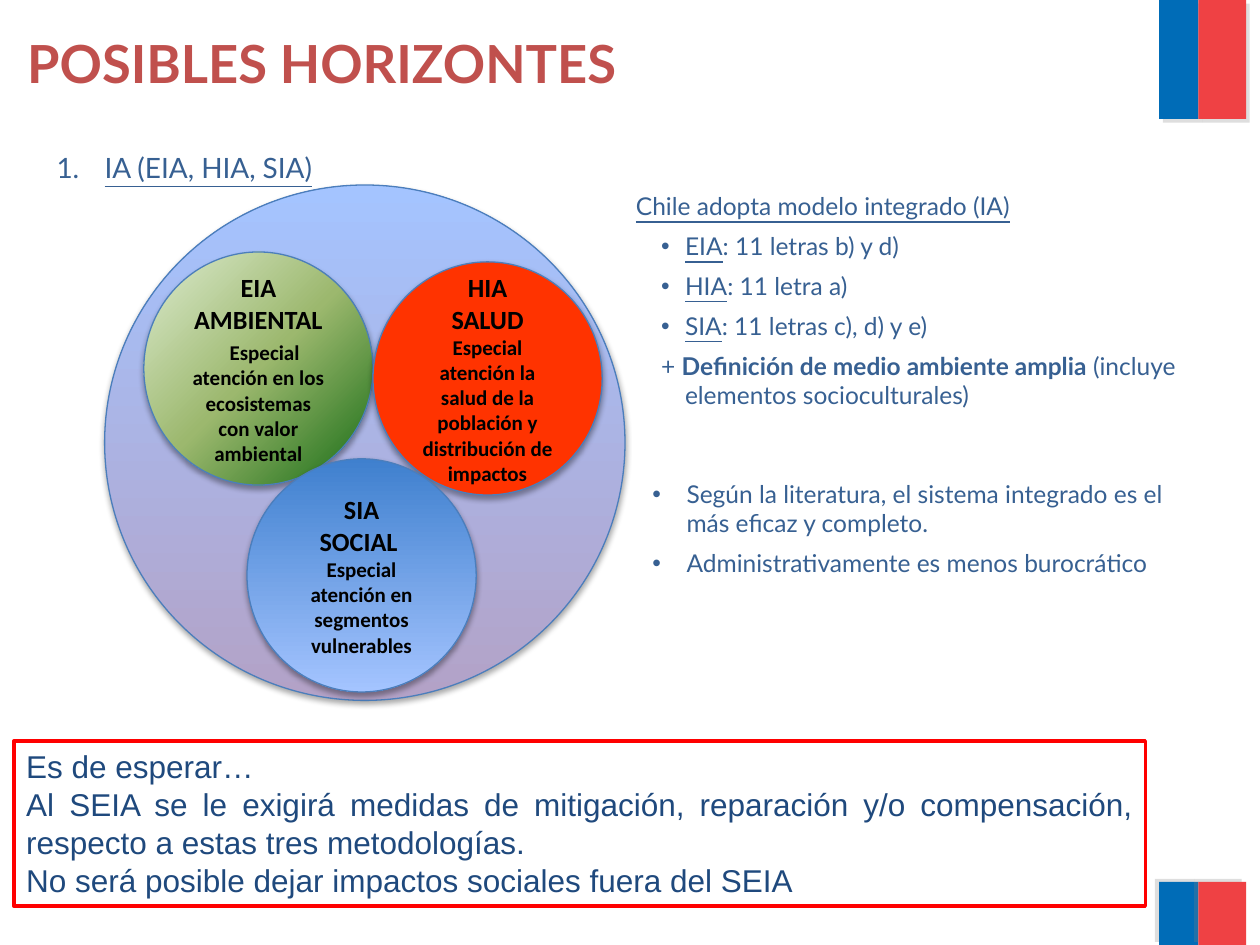
"""Build the slide on the integrated model of environmental, health and social assessment."""
import pptx
import pptx.dml.color
import pptx.enum.shapes
import pptx.enum.text
import pptx.oxml.ns
import pptx.util
from lxml import etree

Cm, Pt = pptx.util.Cm, pptx.util.Pt
RGB = pptx.dml.color.RGBColor
SHAPE = pptx.enum.shapes.MSO_SHAPE
ALIGN = pptx.enum.text.PP_ALIGN
ANCHOR = pptx.enum.text.MSO_ANCHOR
qn = pptx.oxml.ns.qn

FLAG_BLUE, FLAG_RED = RGB(0x00, 0x6C, 0xB7), RGB(0xEF, 0x41, 0x44)
TITLE, TEXT, NAVY = RGB(0xC0, 0x50, 0x4D), RGB(0x37, 0x60, 0x92), RGB(0x1F, 0x49, 0x7D)
BLACK, GREY, RED = RGB(0, 0, 0), RGB(0x80, 0x80, 0x80), RGB(0xFF, 0, 0)
OUTLINE, ORANGE = RGB(0x4B, 0x7E, 0xBC), RGB(0xFF, 0x33, 0x00)
LILAC, SKY, BLUE = RGB(0xB3, 0xA2, 0xC7), RGB(0xA4, 0xC4, 0xFF), RGB(0x3F, 0x80, 0xCE)
PALE, OLIVE, GREEN = RGB(0xDD, 0xEB, 0xCF), RGB(0x9C, 0xB8, 0x6E), RGB(0x15, 0x6B, 0x13)

FLAGS = [(0, 2.4, 45), (17.78, 1.27, 215)]
BANDS = [(23.37, 0.79, FLAG_BLUE), (24.16, 0.96, FLAG_RED)]
FLAG_SHADOW, CIRCLE_SHADOW = (GREY, 25, 0, 3), (BLACK, 35, 3.1, 1.8)

OUTER = (2.11, 3.73, 10.49, 10.39)
INNER_SIZE = (4.62, 4.7)
CIRCLES = [
    (2.9, 5.08, ([(0, PALE), (50, OLIVE), (100, GREEN)], 45), "EIA", "AMBIENTAL",
     "Especial atención en los ecosistemas con valor ambiental", {"first": 0.25, "before": 3}),
    (7.52, 5.28, ORANGE, "HIA", "SALUD",
     "Especial atención la salud de la población y distribución de impactos", {}),
    (4.98, 9.25, ([(0, BLUE), (100, SKY)], 90), "SIA", "SOCIAL ",
     "Especial atención en segmentos vulnerables", {}),
]

UNDER, BOLD = {"underline": True}, {"bold": True}
PLUS = {"left": 0.99, "first": -0.48, "before": 6}
LETTER = {**PLUS, "bullet": "•"}
POINT = {"left": 0.69, "first": -0.69, "before": 6, "bullet": "•"}
NUMBER = {"left": 0.97, "first": -0.97, "before": 6, "bullet": "1."}
LETTERS = [("EIA", ": 11 letras b) y d)"), ("HIA", ": 11 letra a)"), ("SIA", ": 11 letras c), d) y e)")]
BODY = {"name": "Lato", "size": Pt(14)}
TEXTS = [
    ((0.89, 2.92, 11.99, 1.2), {**BODY, "size": Pt(16)}, TEXT, {},
     [([("IA (EIA, HIA, SIA)", UNDER)], NUMBER)]),
    ((0.3, 0, 19.2, 2.51), {**BODY, "size": Pt(30), "bold": True}, TITLE,
     {"vertical_anchor": ANCHOR.MIDDLE}, [([("POSIBLES HORIZONTES", {})], {})]),
    ((12.57, 3.73, 12.29, 4.19), BODY, TEXT, {},
     [([("Chile adopta modelo integrado (IA)", UNDER)], {"before": 6})]
     + [([(name, UNDER), (law, {})], LETTER) for name, law in LETTERS]
     + [([("+ ", {}), ("Definición de medio ambiente amplia ", BOLD),
          ("(incluye elementos socioculturales)", {})], PLUS)]),
    ((12.9, 9.53, 11.2, 2.59), BODY, TEXT, {},
     [([("Según la literatura, el sistema integrado es el más eficaz y completo.", {})], POINT),
      ([("Administrativamente es menos burocrático", {})], POINT)]),
]
BOX = (0.28, 14.94, 22.81, 3.33)
OUTLOOK = [
    "Es de esperar…",
    "Al SEIA se le exigirá medidas de mitigación, reparación y/o compensación, "
    "respecto a estas tres metodologías.",
    "No será posible dejar impactos sociales fuera del SEIA",
]


def assign(target, values):
    for key, value in values.items():
        setattr(target, key, value)


def write(tf, paragraphs, font, color, align=ALIGN.LEFT, frame={}):
    assign(tf, {"word_wrap": True, "vertical_anchor": ANCHOR.TOP, **frame})
    for i, (runs, layout) in enumerate(paragraphs):
        p = tf.paragraphs[0] if i == 0 else tf.add_paragraph()
        assign(p, {"alignment": align, "space_before": Pt(layout.get("before", 0))})
        pPr = p._p.get_or_add_pPr()
        pPr.set("marL", str(Cm(layout.get("left", 0))))
        pPr.set("indent", str(Cm(layout.get("first", 0))))
        bullet = layout.get("bullet")
        if bullet == "1.":
            etree.SubElement(pPr, qn("a:buAutoNum"), type="arabicPeriod")
        elif bullet:
            etree.SubElement(pPr, qn("a:buFont"), typeface="Arial")
            etree.SubElement(pPr, qn("a:buChar"), char=bullet)
        for text, extra in runs:
            r = p.add_run()
            r.text = text
            assign(r.font, {**font, **extra})
            r.font.color.rgb = color


def paint(sp, fill):
    if fill is None:
        sp.fill.background()
    elif isinstance(fill, RGB):
        sp.fill.solid()
        sp.fill.fore_color.rgb = fill
    else:
        stops, angle = fill
        sp.fill.gradient()
        sp.fill.gradient_angle = 360 - angle
        gs_list = sp._element.spPr.find(".//" + qn("a:gsLst"))
        for gs in list(gs_list):
            gs_list.remove(gs)
        for pos, color in stops:
            gs = etree.SubElement(gs_list, qn("a:gs"), pos=str(pos * 1000))
            etree.SubElement(gs, qn("a:srgbClr"), val=str(color))


def add_shape(shapes, kind, box, fill, line=None, shadow=None):
    sp = shapes.add_shape(kind, *map(Cm, box))
    paint(sp, fill)
    if line:
        sp.line.color.rgb, sp.line.width = line
    else:
        sp.line.fill.background()
    sp.shadow.inherit = False
    if shadow:
        color, alpha, blur, dist, angle = shadow
        outer = etree.SubElement(
            sp._element.spPr.find(qn("a:effectLst")), qn("a:outerShdw"), blurRad=str(Pt(blur)),
            dist=str(Pt(dist)), dir=str(angle * 60000), algn="ctr", rotWithShape="0")
        clr = etree.SubElement(outer, qn("a:srgbClr"), val=str(color))
        etree.SubElement(clr, qn("a:alpha"), val=str(alpha * 1000))
    return sp


def main():
    prs = pptx.Presentation()
    assign(prs, {"slide_width": Cm(25.4), "slide_height": Cm(19.05)})
    s = prs.slides.add_slide(prs.slide_layouts[6])

    for top, height, angle in FLAGS:
        for left, width, color in BANDS:
            add_shape(s.shapes, SHAPE.RECTANGLE, (left, top, width, height), color,
                      shadow=(*FLAG_SHADOW, angle))

    for box, font, color, frame, paragraphs in TEXTS:
        write(s.shapes.add_textbox(*map(Cm, box)).text_frame, paragraphs, font, color, frame=frame)

    diagram = s.shapes.add_group_shape().shapes
    style = {"line": (OUTLINE, Pt(0.75)), "shadow": (*CIRCLE_SHADOW, 90)}
    add_shape(diagram, SHAPE.OVAL, OUTER, ([(0, LILAC), (100, SKY)], 270), **style)
    for left, top, fill, name, field, focus, layout in CIRCLES:
        sp = add_shape(diagram, SHAPE.OVAL, (left, top, *INNER_SIZE), fill, **style)
        paragraphs = [([(name, {})], {}), ([(field, {})], {}),
                      ([(focus, {"size": Pt(12)})], layout)]
        write(sp.text_frame, paragraphs, {"name": "Calibri", "size": Pt(15), "bold": True}, BLACK,
              ALIGN.CENTER, {"vertical_anchor": ANCHOR.MIDDLE})

    sp = add_shape(s.shapes, SHAPE.RECTANGLE, BOX, None, (RED, Pt(2)))
    write(sp.text_frame, [([(text, {})], {}) for text in OUTLOOK],
          {"name": "Arial", "size": Pt(18)}, NAVY, ALIGN.JUSTIFY)

    prs.save("out.pptx")


if __name__ == "__main__":
    main()
